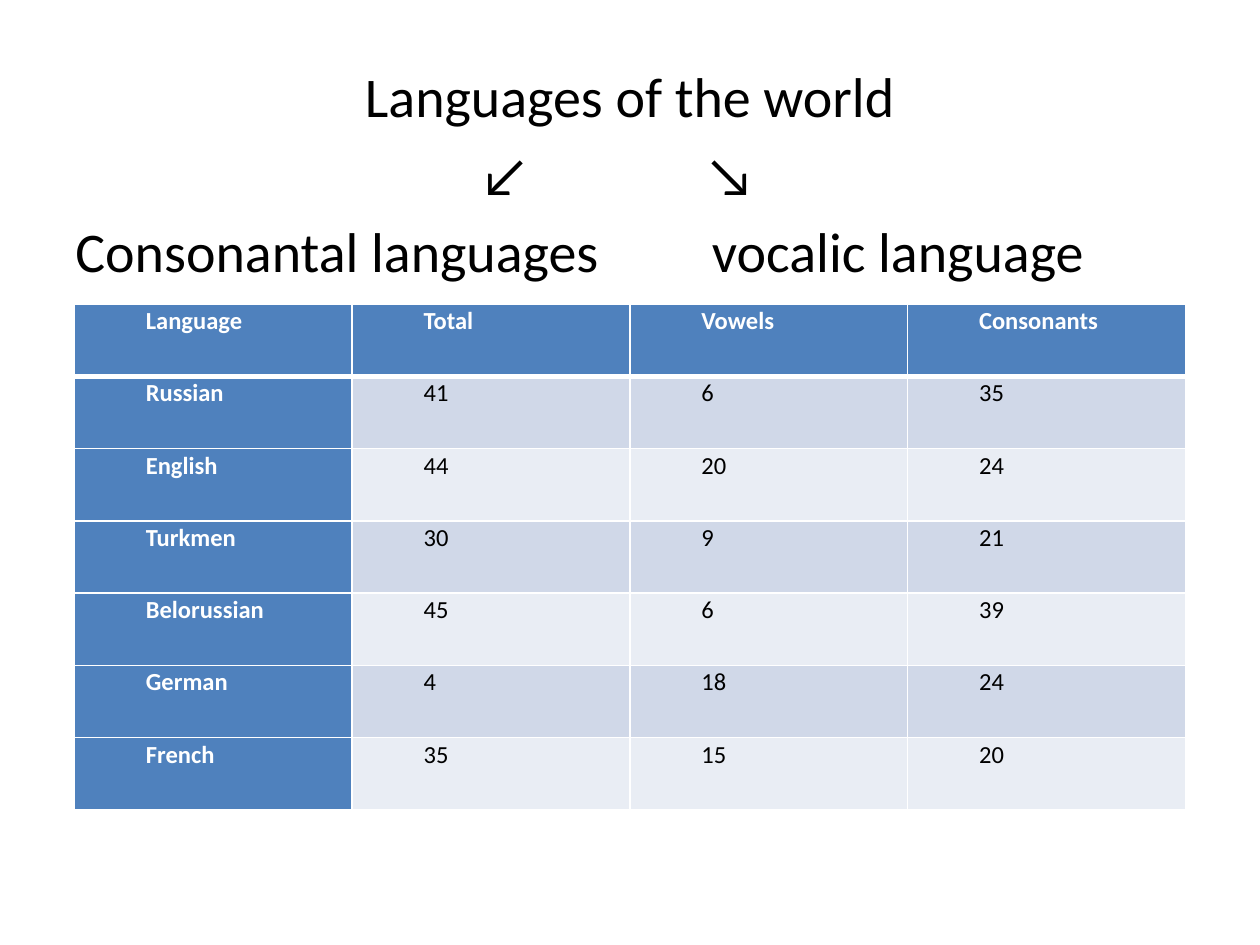
import dataclasses

import pptx
import pptx.dml.color
import pptx.enum.text
import pptx.oxml
import pptx.oxml.ns
import pptx.util

Cm = pptx.util.Cm
Pt = pptx.util.Pt
Align = pptx.enum.text.PP_ALIGN


@dataclasses.dataclass(frozen=True)
class Theme:
    font: str = "Calibri"
    ink: str = "000000"
    paper: str = "FFFFFF"
    accent: str = "4F81BD"
    bands: tuple = ("D0D8E8", "E9EDF4")
    heading: float = 32
    body: float = 14
    thin: float = 1
    thick: float = 3


THEME = Theme()

BRANCHES = [
    ("\t↙\t↘", (8.15, 12.7)),
    ("Consonantal languages\tvocalic language", (12.83,)),
]

SOUNDS = [
    ("Language", "Total", "Vowels", "Consonants"),
    ("Russian", "41", "6", "35"),
    ("English", "44", "20", "24"),
    ("Turkmen", "30", "9", "21"),
    ("Belorussian", "45", "6", "39"),
    ("German", "4", "18", "24"),
    ("French", "35", "15", "20"),
]


def write(para, text, size=THEME.heading, color=THEME.ink, bold=False,
          align=Align.LEFT, before=0, spacing=1.0, indent=0, tabs=()):
    properties = para._p.get_or_add_pPr()
    if indent:
        properties.set("marL", "0")
        properties.set("indent", str(Cm(indent)))
    if tabs:
        tab_list = pptx.oxml.ns.qn("a:tabLst")
        stops = properties.makeelement(tab_list, {})
        properties.append(stops)
        for position in tabs:
            stop = stops.makeelement(
                pptx.oxml.ns.qn("a:tab"), {"pos": str(Cm(position)), "algn": "l"})
            stops.append(stop)
    para.alignment = align
    para.space_before = Pt(before)
    para.line_spacing = spacing
    span = para.add_run()
    span.text = text
    span.font.name = THEME.font
    span.font.size = Pt(size)
    span.font.bold = bold
    span.font.color.rgb = pptx.dml.color.RGBColor.from_string(color)


def prepare_frame(frame):
    frame.word_wrap = True
    frame.auto_size = pptx.enum.text.MSO_AUTO_SIZE.NONE
    frame.vertical_anchor = pptx.enum.text.MSO_ANCHOR.TOP


def add_title(page, text):
    title = page.shapes.title
    title.left, title.top = Cm(1.27), Cm(1.12)
    title.width, title.height = Cm(22.86), Cm(1.6)
    prepare_frame(title.text_frame)
    write(title.text_frame.paragraphs[0], text, align=Align.CENTER)


def add_branches(page, lines):
    box = page.shapes.add_textbox(Cm(1.27), Cm(2.69), Cm(22.86), Cm(3.3))
    frame = box.text_frame
    prepare_frame(frame)
    for number, (text, tabs) in enumerate(lines):
        para = frame.add_paragraph() if number else frame.paragraphs[0]
        write(para, text, tabs=tabs, before=5.6 if number else 0)


def set_borders(cell, **widths):
    properties = cell._tc.get_or_add_tcPr()
    for side in "LRTB":
        width = Pt(widths.get(side, THEME.thin))
        properties.append(pptx.oxml.parse_xml(
            f'<a:ln{side} {pptx.oxml.ns.nsdecls("a")} w="{width}">'
            f'<a:solidFill><a:srgbClr val="{THEME.paper}"/></a:solidFill>'
            f'</a:ln{side}>'))


def format_cell(cell, text, row, column):
    label = row == 0 or column == 0
    fill = THEME.accent if label else THEME.bands[(row - 1) % 2]
    rule = {0: {"B": THEME.thick}, 1: {"T": THEME.thick}}.get(row, {})
    set_borders(cell, **rule)
    cell.fill.solid()
    cell.fill.fore_color.rgb = pptx.dml.color.RGBColor.from_string(fill)
    cell.margin_left = cell.margin_right = Cm(0.19)
    cell.margin_top = cell.margin_bottom = 0
    write(cell.text_frame.paragraphs[0], text, size=THEME.body,
          color=THEME.paper if label else THEME.ink, bold=label,
          align=Align.JUSTIFY, spacing=1.07, indent=1.25)


def add_sound_table(page, rows):
    grid = page.shapes.add_table(
        len(rows), len(rows[0]), Cm(1.5), Cm(6.13), Cm(22.4), Cm(10.2)).table
    for row, values in enumerate(rows):
        for column, text in enumerate(values):
            format_cell(grid.cell(row, column), text, row, column)


def main():
    deck = pptx.Presentation()
    deck.slide_width, deck.slide_height = Cm(25.4), Cm(19.05)
    page = deck.slides.add_slide(deck.slide_layouts.get_by_name("Title Only"))
    add_title(page, "Languages of the world")
    add_branches(page, BRANCHES)
    add_sound_table(page, SOUNDS)
    deck.save("out.pptx")


if __name__ == "__main__":
    main()
